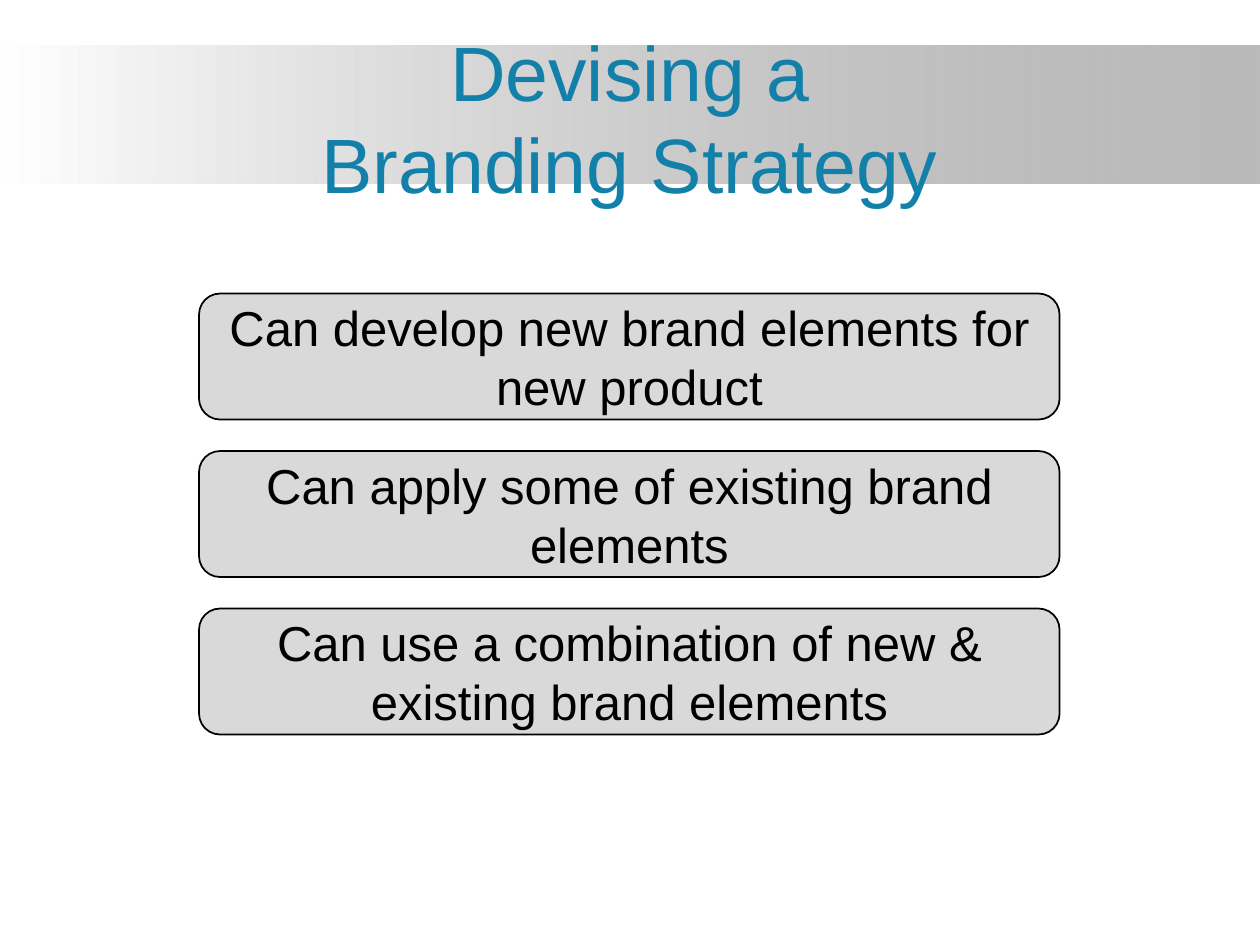
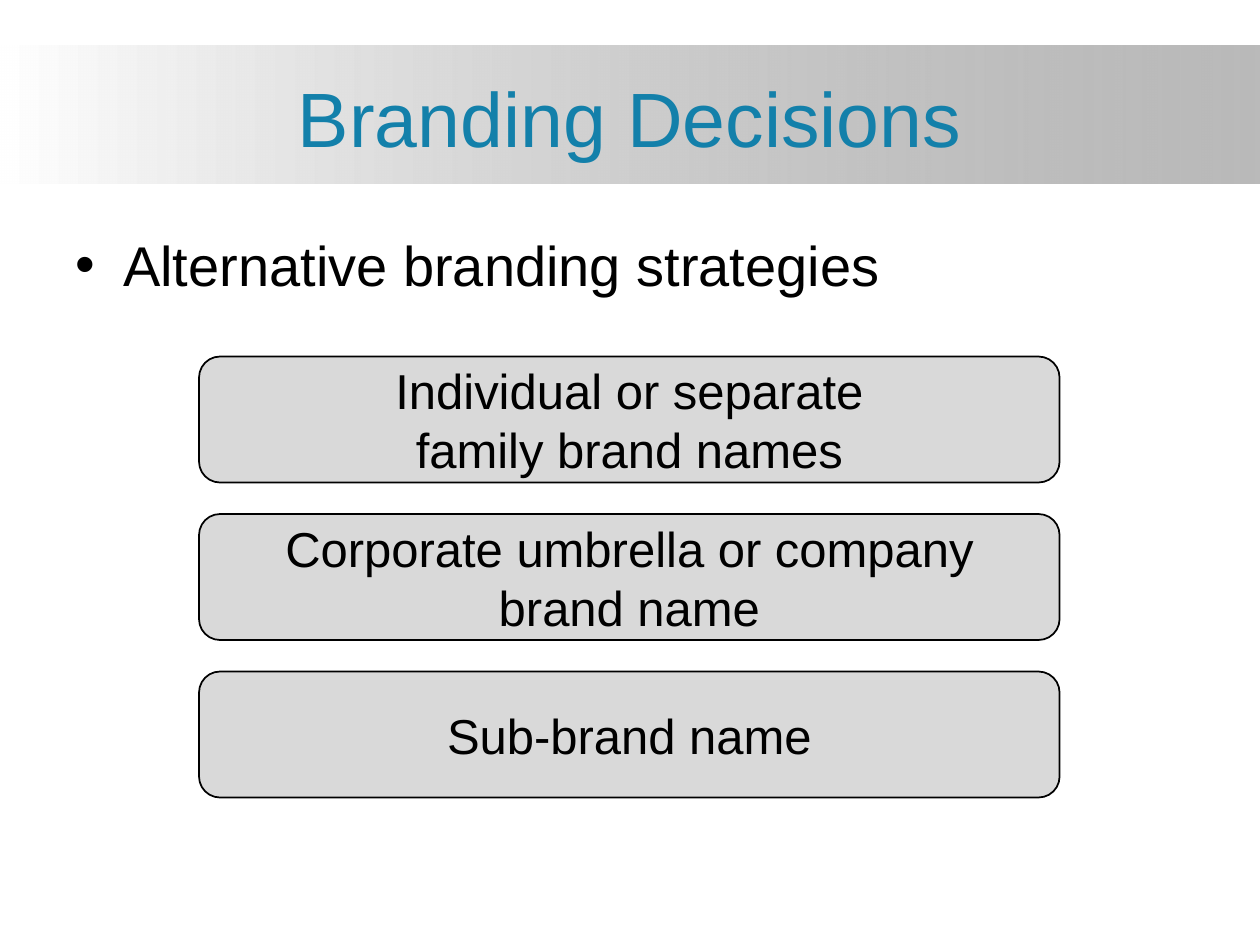
from dataclasses import dataclass

from lxml.etree import SubElement
from pptx import Presentation
from pptx.dml.color import RGBColor
from pptx.enum.shapes import MSO_SHAPE
from pptx.enum.text import MSO_ANCHOR, PP_ALIGN
from pptx.oxml.ns import qn
from pptx.util import Inches, Pt


@dataclass(frozen=True)
class Theme:
    font: str = "Arial"
    title_size: int = 44
    bullet_size: int = 32
    card_size: int = 28
    title: str = "1380AA"
    text: str = "000000"
    card: str = "D9D9D9"
    band_start: str = "FFFFFF"
    band_end: str = "808080"
    band_end_alpha: int = 54


THEME = Theme()

# Boxes: left, top, width, height in inches
BAND = (0, 0.36, 10, 1.1)
TITLE = (0.5, 0.3, 9, 1.25)
BULLET = (0.5, 1.78, 9, 1)
CARD_LEFT, CARD_WIDTH, CARD_HEIGHT, CARD_GAP = 1.58, 6.83, 1, 0.25
BULLET_INDENT = 0.38


def inches(box):
    return [Inches(v) for v in box]


def format_text(tf, size, color, align, anchor):
    """Apply one look to every paragraph of a text frame."""
    tf.word_wrap = True
    tf.vertical_anchor = anchor
    fmt = {"name": THEME.font, "size": Pt(size), "bold": False}
    for p in tf.paragraphs:
        p.alignment = align
        for r in p.runs:
            for key, value in fmt.items():
                setattr(r.font, key, value)
            r.font.color.rgb = RGBColor.from_string(color)


def add_band(s, box):
    """Draw the gradient band and move it to the layout, behind the title."""
    sp = s.shapes.add_shape(MSO_SHAPE.RECTANGLE, *inches(box))
    sp.shadow.inherit = False
    sp.line.fill.background()
    sp.fill.gradient()
    sp.fill.gradient_angle = 0
    colors = (THEME.band_start, THEME.band_end)
    for stop, position, color in zip(sp.fill.gradient_stops, (0, 1), colors):
        stop.position = position
        stop.color.rgb = RGBColor.from_string(color)
    end_color = list(sp.element.iter(qn("a:srgbClr")))[-1]
    alpha = SubElement(end_color, qn("a:alpha"))
    alpha.set("val", str(THEME.band_end_alpha * 1000))
    s.slide_layout.shapes.element.insert(2, sp.element)


def add_title(s, text, box):
    title = s.shapes.title
    title.left, title.top, title.width, title.height = inches(box)
    title.text_frame.text = text
    format_text(title.text_frame, THEME.title_size, THEME.title,
                PP_ALIGN.CENTER, MSO_ANCHOR.MIDDLE)


def add_bullet(s, text, box):
    tf = s.shapes.add_textbox(*inches(box)).text_frame
    tf.text = text
    pPr = tf.paragraphs[0]._p.get_or_add_pPr()
    pPr.set("marL", str(Inches(BULLET_INDENT)))
    pPr.set("indent", str(-Inches(BULLET_INDENT)))
    SubElement(pPr, qn("a:buFont")).set("typeface", THEME.font)
    SubElement(pPr, qn("a:buChar")).set("char", "•")
    format_text(tf, THEME.bullet_size, THEME.text,
                PP_ALIGN.LEFT, MSO_ANCHOR.TOP)


def add_card(s, text, box):
    sp = s.shapes.add_shape(MSO_SHAPE.ROUNDED_RECTANGLE, *inches(box))
    sp.shadow.inherit = False
    sp.fill.solid()
    sp.fill.fore_color.rgb = RGBColor.from_string(THEME.card)
    sp.line.color.rgb = RGBColor.from_string(THEME.text)
    sp.line.width = Pt(1)
    sp.text_frame.text = text
    format_text(sp.text_frame, THEME.card_size, THEME.text,
                PP_ALIGN.CENTER, MSO_ANCHOR.MIDDLE)


def add_card_stack(s, texts, top):
    for i, text in enumerate(texts):
        y = top + i * (CARD_HEIGHT + CARD_GAP)
        add_card(s, text, (CARD_LEFT, y, CARD_WIDTH, CARD_HEIGHT))


def add_strategy_slide(prs, title, cards, cards_top, bullet=None):
    s = prs.slides.add_slide(prs.slide_layouts[5])
    add_title(s, title, TITLE)
    if bullet:
        add_bullet(s, bullet, BULLET)
    add_card_stack(s, cards, cards_top)
    return s


def main():
    prs = Presentation()
    prs.slide_width, prs.slide_height = Inches(10), Inches(7.5)

    # Slide 1: ways to brand a new product
    s = add_strategy_slide(
        prs, "Devising a\vBranding Strategy",
        ["Can develop new brand elements for new product",
         "Can apply some of existing brand elements",
         "Can use a combination of new & existing brand elements"],
        cards_top=2.33)
    add_band(s, BAND)

    # Slide 2: alternative brand names
    add_strategy_slide(
        prs, "Branding Decisions",
        ["Individual or separate\nfamily brand names",
         "Corporate umbrella or company brand name",
         "Sub-brand name"],
        cards_top=2.83, bullet="Alternative branding strategies")

    prs.save("out.pptx")


if __name__ == "__main__":
    main()
